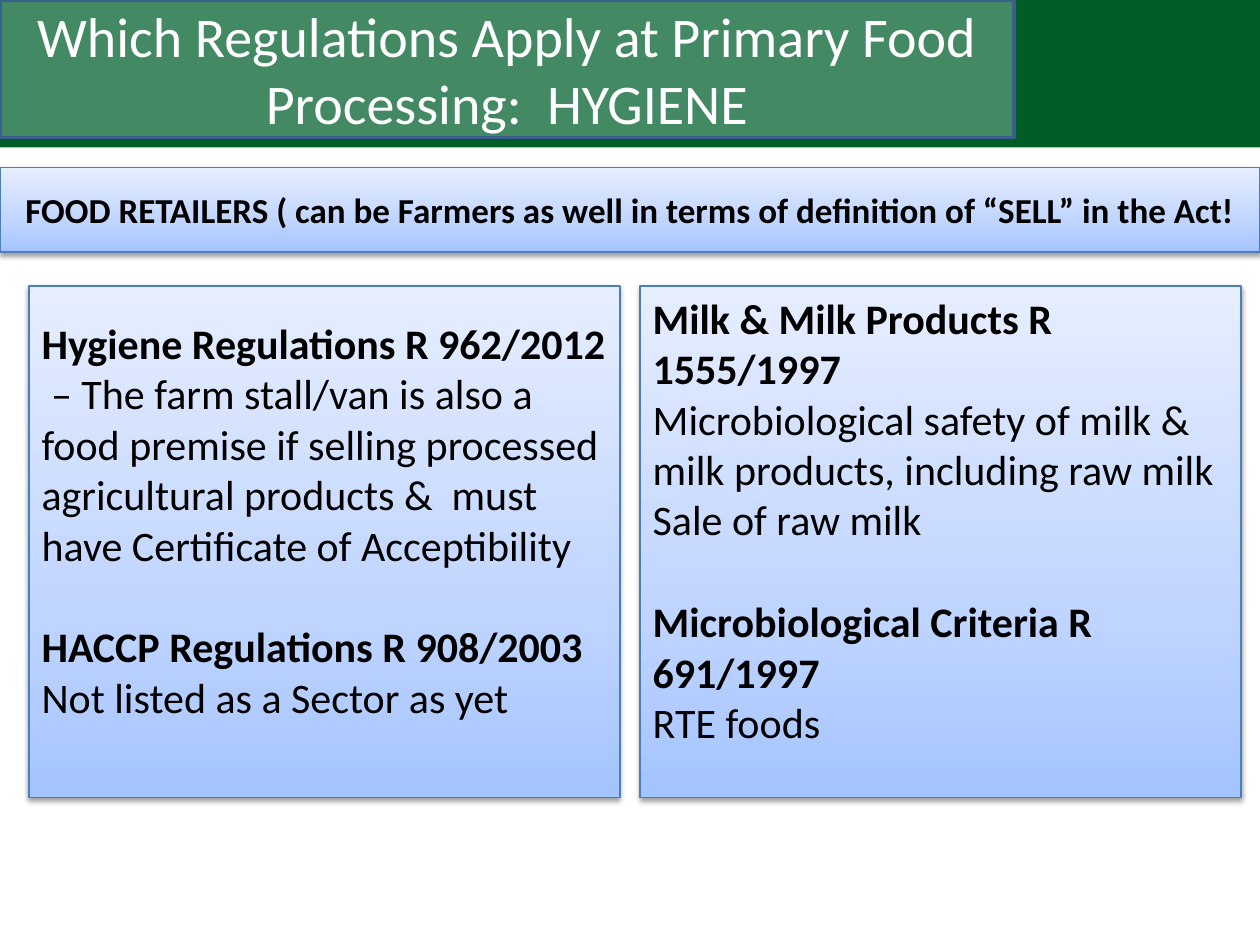
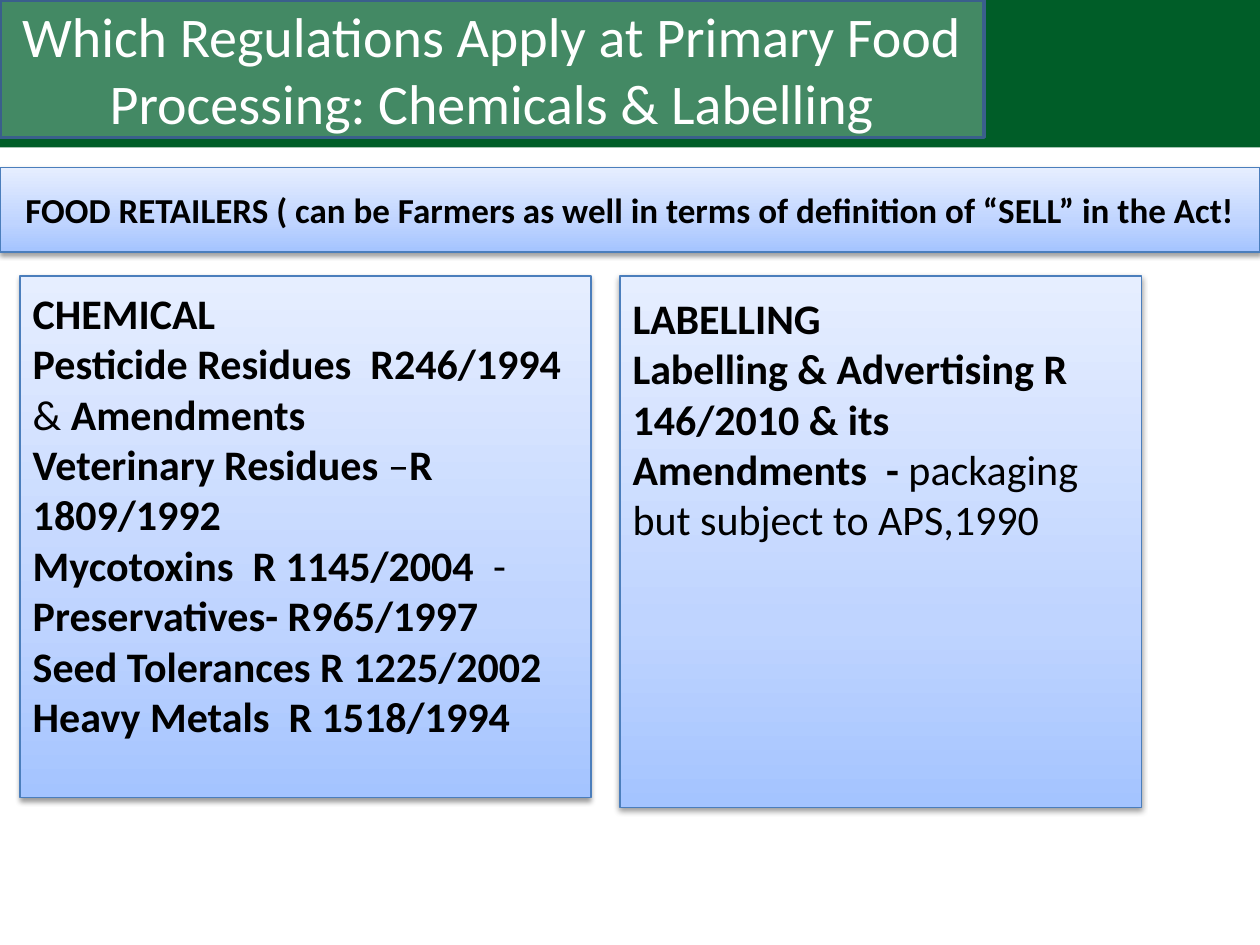
from copy import deepcopy

from lxml import etree
from pptx import Presentation
from pptx.dml.color import RGBColor
from pptx.enum.shapes import MSO_SHAPE as Shape
from pptx.enum.text import MSO_ANCHOR as Anchor, MSO_AUTO_SIZE as AutoSize, PP_ALIGN as Align
from pptx.oxml.ns import qn
from pptx.util import Inches, Pt

# Shared look
FONT = "Calibri"
BLACK = RGBColor(0x00, 0x00, 0x00)
WHITE = RGBColor(0xFF, 0xFF, 0xFF)
BAND_GREEN = RGBColor(0x00, 0x5D, 0x28)
TITLE_GREEN = RGBColor(0x43, 0x89, 0x64)
TITLE_EDGE = RGBColor(0x3A, 0x5F, 0x8C)
CARD_EDGE = RGBColor(0x4B, 0x7E, 0xBC)
CARD_GRADIENT = [
    (0, RGBColor(0xA4, 0xC4, 0xFF)),
    (0.35, RGBColor(0xBF, 0xD4, 0xFF)),
    (1, RGBColor(0xE6, 0xEE, 0xFF)),
]
SECTION_GAP = 29.3  # one line of card text, in points

# Content: a card holds sections, a section paragraphs, a paragraph (text, bold) runs
BANNER = "FOOD RETAILERS ( can be Farmers as well in terms of definition of “SELL” in the Act!"
SLIDES = [
    {
        "title": "Which Regulations Apply at Primary Food Processing:  HYGIENE",
        "title_width": 8.05,
        "cards": [
            {"box": (0.23, 2.27, 4.69, 4.06), "top_inset": 0.25, "sections": [
                [
                    [("Hygiene Regulations R 962/2012", True)],
                    [(" – The farm stall/van is also a food premise if selling processed "
                      "agricultural products &  must have Certificate of Acceptibility", False)],
                ],
                [
                    [("HACCP Regulations R 908/2003", True)],
                    [("Not listed as a Sector as yet", False)],
                ],
            ]},
            {"box": (5.08, 2.27, 4.77, 4.06), "top_inset": 0.05, "sections": [
                [
                    [("Milk & Milk Products R 1555/1997", True)],
                    [("Microbiological safety of milk & milk products, including raw milk", False)],
                    [("Sale of raw milk", False)],
                ],
                [
                    [("Microbiological Criteria R 691/1997", True)],
                    [("RTE foods", False)],
                ],
            ]},
        ],
    },
    {
        "title": "Which Regulations Apply at Primary Food Processing: Chemicals & Labelling",
        "title_width": 7.81,
        "cards": [
            {"box": (0.16, 2.19, 4.53, 4.14), "top_inset": 0.09, "sections": [[
                [("CHEMICAL", True)],
                [("Pesticide Residues  R246/1994 ", True), ("& ", False), ("Amendments", True)],
                [("Veterinary Residues ", True), ("–", False), ("R 1809/1992", True)],
                [("Mycotoxins  R 1145/2004  ", True), ("-", False)],
                [("Preservatives- R965/1997", True)],
                [("Seed Tolerances R 1225/2002", True)],
                [("Heavy Metals  R 1518/1994", True)],
            ]]},
            {"box": (4.92, 2.19, 4.14, 4.22), "top_inset": 0.13, "sections": [[
                [("LABELLING", True)],
                [("Labelling & Advertising R 146/2010 & its Amendments  - ", True),
                 ("packaging but subject to APS,1990", False)],
            ]]},
        ],
    },
]


def place(shape, left, top, width, height):
    shape.left, shape.top = Inches(left), Inches(top)
    shape.width, shape.height = Inches(width), Inches(height)


def write(shape, sections, size, color=BLACK, align=Align.LEFT, anchor=Anchor.MIDDLE,
          top_inset=0.05, wrap=True):
    """Fill a shape with sections of unbulleted paragraphs."""
    frame = shape.text_frame
    frame.auto_size, frame.word_wrap = AutoSize.NONE, wrap
    frame.vertical_anchor = anchor
    frame.margin_left = frame.margin_right = Inches(0.1)
    frame.margin_top, frame.margin_bottom = Inches(top_inset), Inches(0.05)
    paragraph = None
    for section in sections:
        for index, runs in enumerate(section):
            is_first = paragraph is None
            paragraph = frame.paragraphs[0] if is_first else frame.add_paragraph()
            properties = paragraph._p.get_or_add_pPr()
            properties.set("marL", "0")
            properties.set("indent", "0")
            etree.SubElement(properties, qn("a:buNone"))
            paragraph.alignment = align
            paragraph.space_before = Pt(SECTION_GAP if index == 0 and not is_first else 0)
            for text, bold in runs:
                run = paragraph.add_run()
                run.text = text
                run.font.name, run.font.size, run.font.bold = FONT, Pt(size), bold
                run.font.color.rgb = color


def style_card(shape):
    """Blue gradient, thin edge and soft shadow below."""
    shape.fill.gradient()
    shape.fill.gradient_angle = 90
    stops = shape._element.spPr.find(".//" + qn("a:gsLst"))
    stops.insert(1, deepcopy(stops[0]))
    for stop, (position, color) in zip(shape.fill.gradient_stops, CARD_GRADIENT):
        stop.position, stop.color.rgb = position, color
    shape.line.color.rgb, shape.line.width = CARD_EDGE, Pt(0.75)
    shape.shadow.inherit = False
    effects = shape._element.spPr.find(qn("a:effectLst"))
    shadow = etree.SubElement(effects, qn("a:outerShdw"), blurRad=str(Pt(3.1)),
                              dist=str(Pt(1.6)), dir="5400000", rotWithShape="0")
    shadow_color = etree.SubElement(shadow, qn("a:srgbClr"), val=str(BLACK))
    etree.SubElement(shadow_color, qn("a:alpha"), val="38000")


def add_rectangle(slide, left, top, width, height):
    return slide.shapes.add_shape(Shape.RECTANGLE, Inches(left), Inches(top),
                                  Inches(width), Inches(height))


def add_layout_band(slide):
    """Move the green header band behind everything in the shared layout."""
    band = add_rectangle(slide, 0, 0, 10, 1.17)
    band.shadow.inherit = False
    band.fill.solid()
    band.fill.fore_color.rgb = BAND_GREEN
    band.line.fill.background()
    slide.slide_layout.shapes._spTree.insert(2, band._element)


def fill_title(title, text, width):
    place(title, 0, 0, width, 1.09)
    geometry = etree.SubElement(title._element.spPr, qn("a:prstGeom"), prst="roundRect")
    etree.SubElement(geometry, qn("a:avLst"))
    title.fill.solid()
    title.fill.fore_color.rgb = TITLE_GREEN
    title.line.color.rgb, title.line.width = TITLE_EDGE, Pt(2)
    write(title, [[[(text, False)]]], size=32, color=WHITE, align=Align.CENTER)


def main():
    presentation = Presentation()
    presentation.slide_width, presentation.slide_height = Inches(10), Inches(7.5)
    two_content = presentation.slide_layouts[3]

    for number, content in enumerate(SLIDES):
        slide = presentation.slides.add_slide(two_content)
        if number == 0:
            add_layout_band(slide)
        fill_title(slide.shapes.title, content["title"], content["title_width"])

        # Regulation cards in the two body placeholders
        for index, card in enumerate(content["cards"], start=1):
            body = slide.placeholders[index]
            place(body, *card["box"])
            style_card(body)
            write(body, card["sections"], size=24, anchor=Anchor.TOP,
                  top_inset=card["top_inset"])

        # Banner across the slide
        banner = add_rectangle(slide, 0, 1.33, 10, 0.67)
        style_card(banner)
        write(banner, [[[(BANNER, True)]]], size=20, align=Align.CENTER, wrap=False)

    presentation.save("out.pptx")


if __name__ == "__main__":
    main()
